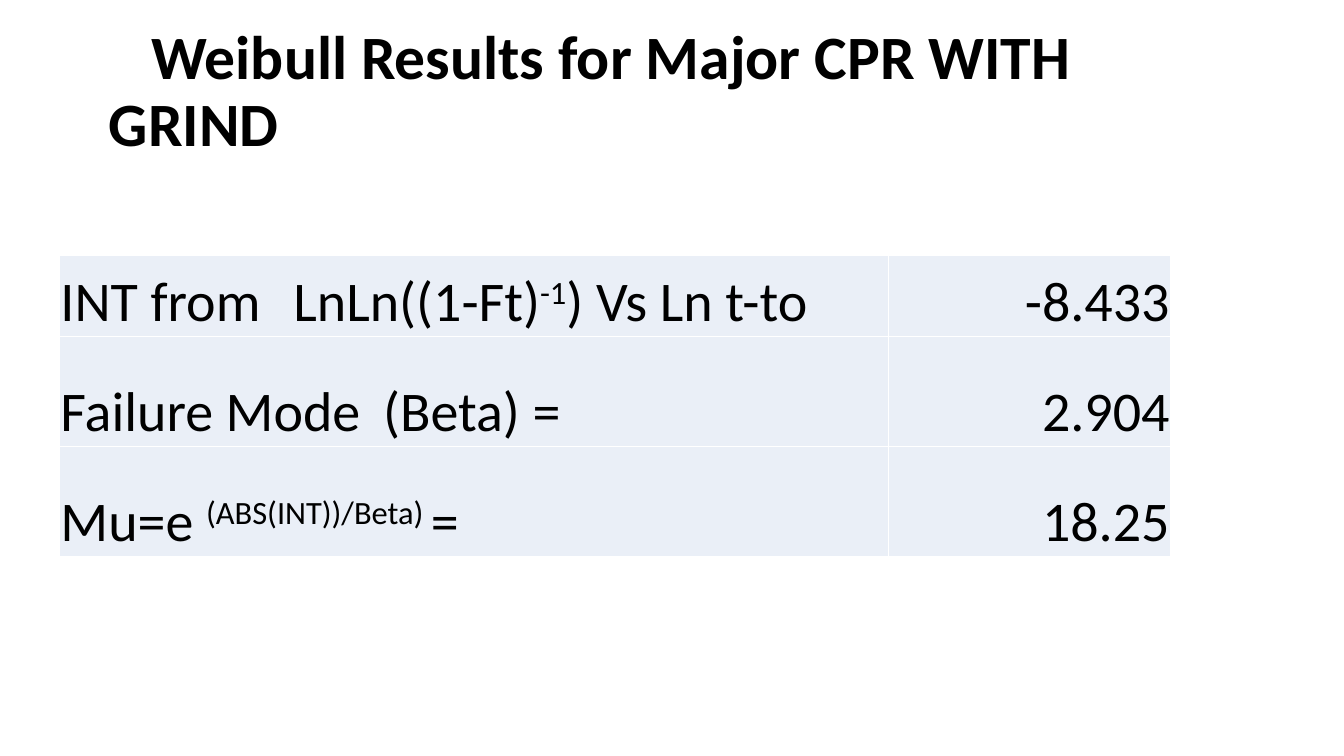
from lxml import etree
from pptx import Presentation
from pptx.dml.color import RGBColor
from pptx.enum import text as t
from pptx.oxml import ns
from pptx.util import Inches, Pt

TITLE = "Weibull Results for Major CPR WITH GRIND"
ROWS = [
    (0.81, 2.31, [("INT from\tLnLn((1-Ft)", 0), ("-1", 30), (") Vs Ln t-to", 0)], "-8.433"),
    (1.09, 3.2, [("Failure Mode\t(Beta) =", 0)], "2.904"),
    (1.09, None, [("Mu=e ", 0), ("(ABS(INT))/Beta) ", 30), ("=", 0)], "18.25"),
]
COLS = [8.22, 2.8]
BLACK, WHITE, PALE = "000000", "FFFFFF", "EAEFF7"


def color(code):
    return RGBColor.from_string(code)


def write(frame, runs, size=40, bold=False, align=t.PP_ALIGN.LEFT):
    para = frame.paragraphs[0]
    para.alignment = align
    for words, base in runs:
        run = para.add_run()
        run.text = words
        font = run.font
        font.name, font.size, font.bold = "Calibri", Pt(size), bold
        font.color.rgb = color(BLACK)
        if base:
            font._element.set("baseline", str(base * 1000))
    return para


def add(parent, tag, **attrs):
    node = etree.SubElement(parent, ns.qn(tag))
    for key, value in attrs.items():
        node.set(key, str(value))
    return node


def style(cell):
    props = cell._tc.get_or_add_tcPr()
    for side in ("a:lnL", "a:lnR", "a:lnT", "a:lnB"):
        line = add(props, side, w=Pt(1))
        add(add(line, "a:solidFill"), "a:srgbClr", val=WHITE)
    cell.fill.solid()
    cell.fill.fore_color.rgb = color(PALE)
    cell.vertical_anchor = t.MSO_ANCHOR.BOTTOM
    cell.margin_left = cell.margin_right = cell.margin_top = Inches(0.01)
    cell.margin_bottom = 0


deck = Presentation()
deck.slide_width, deck.slide_height = Inches(13.33), Inches(7.5)
slide = deck.slides.add_slide(deck.slide_layouts[5])

title = slide.shapes.title
title.left, title.top = Inches(0.98), Inches(0.2)
title.width, title.height = Inches(11.5), Inches(1.45)
frame = title.text_frame
frame.word_wrap = True
frame.auto_size = t.MSO_AUTO_SIZE.NONE
frame.vertical_anchor = t.MSO_ANCHOR.MIDDLE
head = write(frame, [(TITLE, 0)], size=44, bold=True)
head.line_spacing = 0.9
head._p.get_or_add_pPr().set("indent", str(Inches(0.42)))

high = sum(row[0] for row in ROWS)
grid = slide.shapes.add_table(len(ROWS), len(COLS), Inches(0.59), Inches(2.53),
                              Inches(sum(COLS)), Inches(high)).table
grid.first_row = grid.horz_banding = False
for col, wide in zip(grid.columns, COLS):
    col.width = Inches(wide)
for i, (tall, stop, label, value) in enumerate(ROWS):
    grid.rows[i].height = Inches(tall)
    left, right = grid.cell(i, 0), grid.cell(i, 1)
    style(left)
    style(right)
    para = write(left.text_frame, label)
    if stop:
        tabs = add(para._p.get_or_add_pPr(), "a:tabLst")
        add(tabs, "a:tab", pos=Inches(stop), algn="l")
    write(right.text_frame, [(value, 0)], align=t.PP_ALIGN.RIGHT)

deck.save("out.pptx")
